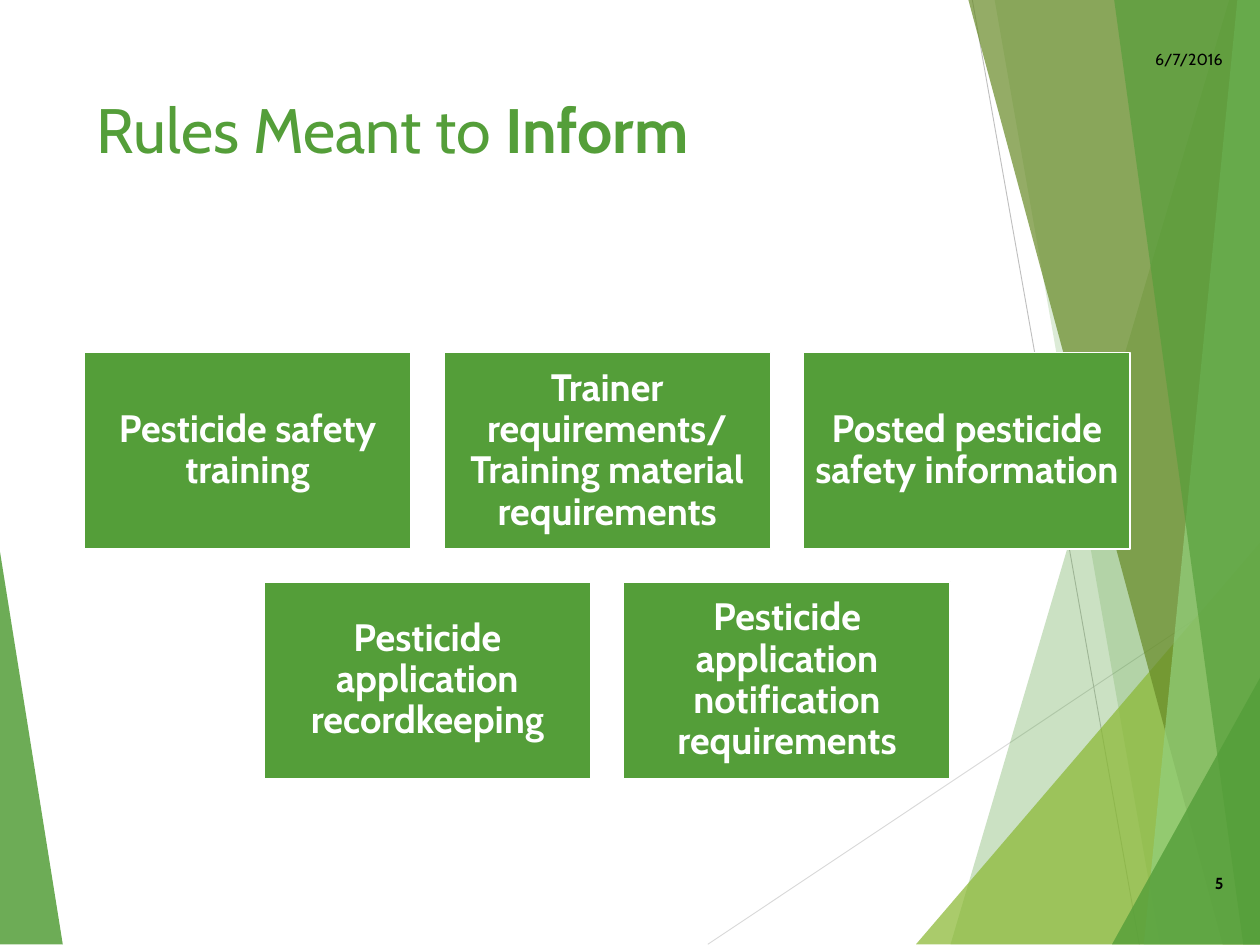
from dataclasses import dataclass

from lxml import etree
from pptx import Presentation
from pptx import util as u
from pptx.dml import color
from pptx.enum import shapes, text
from pptx.oxml import ns

Cm, Pt = u.Cm, u.Pt


@dataclass(frozen=True)
class Theme:
    font: str = "Cabin"
    green: str = "549E39"
    lime: str = "8AB833"
    olive: str = "678A26"
    mint: str = "93D07D"
    light_gray: str = "D9D9D9"
    gray: str = "BFBFBF"
    white: str = "FFFFFF"
    black: str = "000000"
    title_size: int = 51
    card_size: int = 31
    footer_size: int = 13


@dataclass(frozen=True)
class Box:
    """A region in centimetres."""
    left: float
    top: float
    width: float
    height: float

    @property
    def right(self):
        return self.left + self.width

    @property
    def bottom(self):
        return self.top + self.height

    def lengths(self):
        return [Cm(n) for n in (self.left, self.top, self.width, self.height)]


THEME = Theme()
PAGE = Box(0, 0, 36.12, 27.1)
DECOR = Box(0, -0.08, 36.2, 27.16)

# Upper-left x and y, bottom x, colour, opacity in percent
RIGHT_FACETS = [
    (35.26, DECOR.top, 27.25, THEME.green, 30),
    (28.5, DECOR.top, 33.25, THEME.green, 20),
    (DECOR.right, 15.47, 26.26, THEME.lime, 72),
    (27.74, DECOR.top, 35.05, THEME.olive, 70),
    (35.48, DECOR.top, 32.79, THEME.mint, 70),
    (31.93, DECOR.top, 35.64, THEME.green, 65),
    (DECOR.right, 19.3, 31.88, THEME.green, 80),
]
CARD_ROWS = [
    ["Pesticide safety training",
     "Trainer requirements/ Training material requirements",
     "Posted pesticide safety information"],
    ["Pesticide application recordkeeping",
     "Pesticide application notification requirements"],
]


def rgb(value):
    return color.RGBColor.from_string(value)


def style_text(shape, size, font_color, align, anchor, bold=False):
    frame = shape.text_frame
    frame.word_wrap = True
    frame.auto_size = text.MSO_AUTO_SIZE.NONE
    frame.vertical_anchor = anchor
    frame.margin_left = frame.margin_right = Cm(0.36)
    frame.margin_top = frame.margin_bottom = Cm(0.18)
    for paragraph in frame.paragraphs:
        paragraph.alignment = align
        for run in paragraph.runs:
            run.font.name = THEME.font
            run.font.size = Pt(size)
            run.font.bold = bold
            run.font.color.rgb = rgb(font_color)


def add_facet(slide, points, fill_color, opacity):
    corners = [(Cm(x), Cm(y)) for x, y in points]
    builder = slide.shapes.build_freeform(*corners[0])
    builder.add_line_segments(corners[1:], close=True)
    shape = builder.convert_to_shape()
    shape.shadow.inherit = False
    shape.fill.solid()
    shape.fill.fore_color.rgb = rgb(fill_color)
    shape.line.fill.background()
    fill = shape.element.spPr.find(ns.qn("a:solidFill"))
    etree.SubElement(fill[0], ns.qn("a:alpha"), val=str(opacity * 1000))


def add_hairline(slide, start, end, line_color):
    ends = [Cm(n) for n in (*start, *end)]
    line = slide.shapes.add_connector(shapes.MSO_CONNECTOR.STRAIGHT, *ends)
    line.line.color.rgb = rgb(line_color)
    line.line.width = Pt(0.75)
    etree.SubElement(line.element.spPr, ns.qn("a:effectLst"))


def add_decor(slide, box):
    left_facet = [(box.left, 15.82), (1.8, box.bottom), (box.left, box.bottom)]
    add_facet(slide, left_facet, THEME.green, 85)
    add_hairline(slide, (20.29, box.bottom), (box.right, 16.46), THEME.light_gray)
    add_hairline(slide, (27.86, box.top), (32.66, box.bottom), THEME.gray)
    for x, y, bottom_x, fill_color, opacity in RIGHT_FACETS:
        points = [(x, y), (bottom_x, box.bottom),
                  (box.right, box.bottom), (box.right, y)]
        add_facet(slide, points, fill_color, opacity)


def place_title(slide, box):
    title = slide.shapes.title
    title.left, title.top, title.width, title.height = box.lengths()
    paragraph = title.text_frame.paragraphs[0]
    for words in ("Rules Meant to ", "Inform"):
        paragraph.add_run().text = words
    style_text(title, THEME.title_size, THEME.green,
               text.PP_ALIGN.LEFT, text.MSO_ANCHOR.TOP)
    paragraph.runs[-1].font.bold = True


def add_card(slide, box, words):
    card = slide.shapes.add_shape(shapes.MSO_SHAPE.RECTANGLE, *box.lengths())
    card.shadow.inherit = False
    card.fill.solid()
    card.fill.fore_color.rgb = rgb(THEME.green)
    card.line.color.rgb = rgb(THEME.white)
    card.line.width = Pt(1.5)
    frame = card.text_frame
    frame.text = words
    style_text(card, THEME.card_size, THEME.white,
               text.PP_ALIGN.CENTER, text.MSO_ANCHOR.MIDDLE, bold=True)
    frame.margin_left = frame.margin_right = Cm(0.33)
    frame.margin_top = frame.margin_bottom = Cm(0.33)
    frame.paragraphs[0].line_spacing = 0.9


def add_cards(slide, box, gap=0.94):
    """Lay the rows out with equal cards, each row centred in the box."""
    columns = max(len(row) for row in CARD_ROWS)
    width = (box.width - gap * (columns - 1)) / columns
    height = (box.height - gap * (len(CARD_ROWS) - 1)) / len(CARD_ROWS)
    for row_index, row in enumerate(CARD_ROWS):
        left = box.left + (columns - len(row)) * (width + gap) / 2
        top = box.top + row_index * (height + gap)
        for column, words in enumerate(row):
            card_box = Box(left + column * (width + gap), top, width, height)
            add_card(slide, card_box, words)


def add_label(slide, box, words, bold=False):
    label = slide.shapes.add_textbox(*box.lengths())
    label.text_frame.text = words
    style_text(label, THEME.footer_size, THEME.black,
               text.PP_ALIGN.RIGHT, text.MSO_ANCHOR.MIDDLE, bold)


def main():
    presentation = Presentation()
    presentation.slide_width = Cm(PAGE.width)
    presentation.slide_height = Cm(PAGE.height)
    title_only = presentation.slide_layouts.get_by_name("Title Only")
    slide = presentation.slides.add_slide(title_only)
    add_decor(slide, DECOR)
    place_title(slide, Box(2.41, 2.41, 25.07, 5.21))
    add_cards(slide, Box(2.41, 10.11, 29.99, 12.22))
    add_label(slide, Box(32.72, 0.97, 2.69, 1.45), "6/7/2016")
    add_label(slide, Box(33.4, 24.61, 2.03, 1.45), "5", bold=True)
    presentation.save("out.pptx")


if __name__ == "__main__":
    main()
